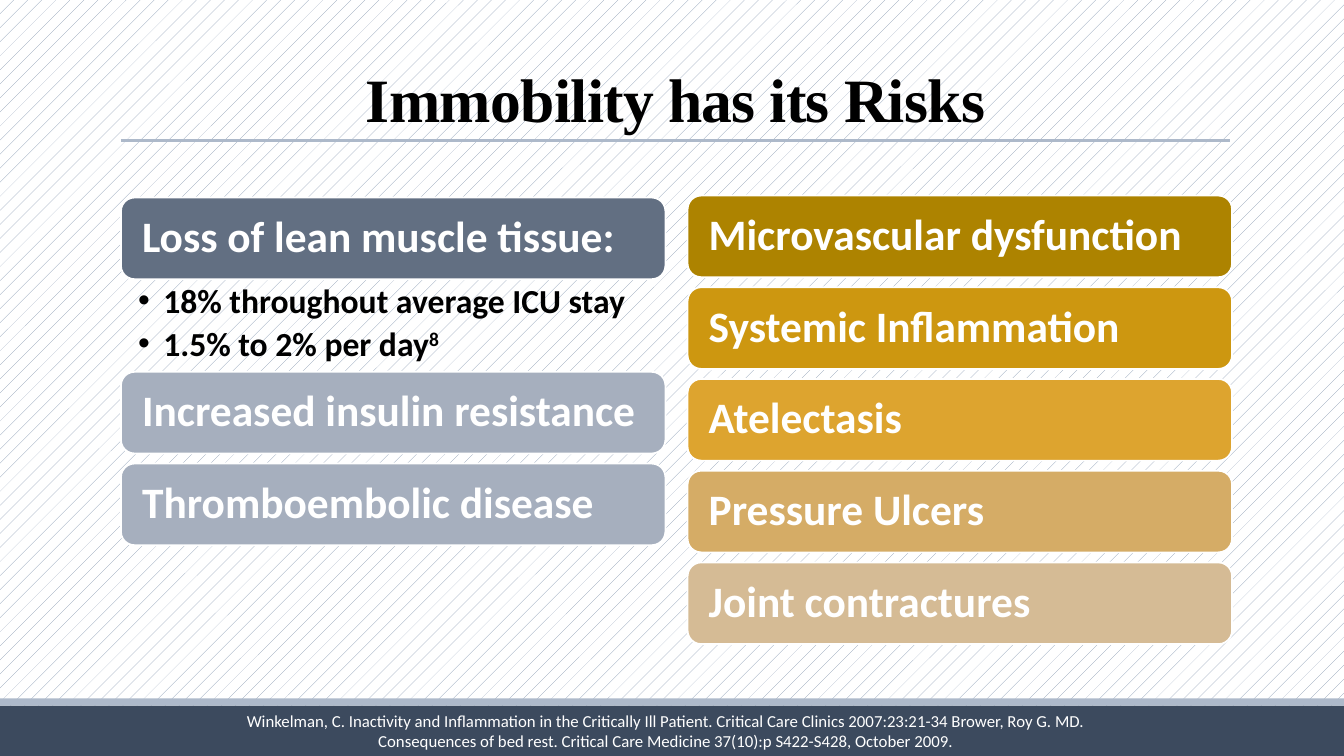
from lxml import etree
from pptx import Presentation
from pptx import util as u
from pptx.dml.color import RGBColor
from pptx.enum import dml, shapes, text
from pptx.oxml.ns import qn

WIDTH, HEIGHT = 13.33, 7.5
COL_X, COL_PITCH, COL_W = 1.2, 5.62, 5.4
COL_TOPS = (1.96, 1.94)
ROW_PITCH, CARD_H = 0.91, 0.81
TITLE = dict(name="Times New Roman", size=u.Pt(44), bold=True)
CARD = dict(name="Calibri", size=u.Pt(31), bold=True)
BULLET = dict(name="Calibri", size=u.Pt(24), bold=True)
CITATION = dict(name="Calibri", size=u.Pt(12))


def rgb(value):
    return RGBColor.from_string(value)


class Deck:
    def __init__(self):
        self.prs = Presentation()
        self.prs.slide_width, self.prs.slide_height = u.Inches(WIDTH), u.Inches(HEIGHT)
        self.s = self.prs.slides.add_slide(self.prs.slide_layouts[6])

    def cell(self, col, row, height=CARD_H):
        """Box of a grid cell: left, top, width, height."""
        return COL_X + col * COL_PITCH, COL_TOPS[col] + row * ROW_PITCH, COL_W, height

    def background(self, fore, back):
        fill = self.s.background.fill
        fill.patterned()
        fill.pattern = dml.MSO_PATTERN.PERCENT_5
        fill.fore_color.rgb, fill.back_color.rgb = rgb(fore), rgb(back)

    def block(self, box, color, kind=shapes.MSO_SHAPE.RECTANGLE, line=None):
        sp = self.s.shapes.add_shape(kind, *map(u.Inches, box))
        sp.shadow.inherit = False
        sp.fill.solid()
        sp.fill.fore_color.rgb = rgb(color)
        if line:
            sp.line.color.rgb, sp.line.width = rgb(line), u.Pt(1.25)
        else:
            sp.line.fill.background()
        return sp

    def rule(self, x1, x2, y, color):
        line = self.s.shapes.add_connector(
            shapes.MSO_CONNECTOR.STRAIGHT, *map(u.Inches, (x1, y, x2, y)))
        line.line.color.rgb, line.line.width = rgb(color), u.Pt(2.25)
        etree.SubElement(line._element.spPr, qn("a:effectLst"))

    def frame(self, sp, anchor, insets=(0.1, 0.05, 0.1, 0.05)):
        tf = sp.text_frame
        tf.word_wrap, tf.vertical_anchor = True, anchor
        for side, inset in zip(("left", "top", "right", "bottom"), insets):
            setattr(tf, f"margin_{side}", u.Inches(inset))
        return tf

    def textbox(self, box, **layout):
        return self.frame(self.s.shapes.add_textbox(*map(u.Inches, box)), **layout)

    def put_text(self, tf, lines, style, color, align=text.PP_ALIGN.LEFT,
                 spacing=1.0, after=0, hang=0, bullet=None):
        for i, line in enumerate(lines):
            p = tf.paragraphs[0] if i == 0 else tf.add_paragraph()
            p.alignment, p.line_spacing, p.space_after = align, spacing, u.Pt(after)
            pPr = p._p.get_or_add_pPr()
            if hang:
                pPr.set("marL", str(u.Inches(hang)))
                pPr.set("indent", str(-u.Inches(hang)))
            if bullet:
                etree.SubElement(pPr, qn("a:buFont"), typeface="Arial")
                etree.SubElement(pPr, qn("a:buChar"), char=bullet)
            # A caret splits off superscript text
            for k, part in enumerate(line.split("^")):
                r = p.add_run()
                r.text = part
                for name, value in style.items():
                    setattr(r.font, name, value)
                r.font.color.rgb = rgb(color)
                if k:
                    r._r.get_or_add_rPr().set("baseline", "30000")

    def card(self, col, row, label, color):
        sp = self.block(self.cell(col, row), color,
                        shapes.MSO_SHAPE.ROUNDED_RECTANGLE, "FFFFFF")
        tf = self.frame(sp, text.MSO_ANCHOR.MIDDLE, (0.17, 0.13, 0.17, 0.13))
        self.put_text(tf, [label], CARD, "FFFFFF", spacing=0.9)


def main():
    deck = Deck()
    top, bottom = text.MSO_ANCHOR.TOP, text.MSO_ANCHOR.BOTTOM
    center = text.PP_ALIGN.CENTER

    # Background and footer bands
    deck.background("8496B0", "FFFFFF")
    deck.block((0, 7, WIDTH, 0.5), "3C4A5E")
    deck.block((0, 6.93, WIDTH, 0.07), "ADB9CA")

    # Title with its rule
    deck.rule(COL_X, 12.2, 1.39, "ADB9CA")
    tf = deck.textbox((COL_X, 0.31, 11, 1.08), anchor=bottom)
    deck.put_text(tf, ["Immobility has its Risks"], TITLE, "000000", center, spacing=0.85)
    tf.paragraphs[0].runs[0]._r.get_or_add_rPr().set("spc", "-50")

    # Left column, with room for the bullets under the first card
    for row, label, color in (
        (0, "Loss of lean muscle tissue:", "626F82"),
        (1.9, "Increased insulin resistance", "A6AFBE"),
        (2.9, "Thromboembolic disease", "A6AFBE"),
    ):
        deck.card(0, row, label, color)
    tf = deck.textbox(deck.cell(0, 0.9, 0.91), anchor=top, insets=(0.17, 0.04, 0.24, 0.04))
    deck.put_text(tf, ["18% throughout average ICU stay", "1.5% to 2% per day^8"],
                  BULLET, "000000", spacing=0.9, after=4.8, hang=0.25, bullet="•")

    # Right column
    for row, (label, color) in enumerate((
        ("Microvascular dysfunction", "AD8300"),
        ("Systemic Inflammation", "CD9710"),
        ("Atelectasis", "DDA42F"),
        ("Pressure Ulcers", "D5AC66"),
        ("Joint contractures", "D5BB95"),
    )):
        deck.card(1, row, label, color)

    # Citation
    tf = deck.textbox((1.4, 7, 10.41, 0.5), anchor=top)
    deck.put_text(tf, [
        "Winkelman, C. Inactivity and Inflammation in the Critically Ill Patient. "
        "Critical Care Clinics 2007:23:21-34 Brower, Roy G. MD.",
        "Consequences of bed rest. Critical Care Medicine 37(10):p S422-S428, October 2009.",
    ], CITATION, "FFFFFF", center, hang=0.33)

    deck.prs.save("out.pptx")


if __name__ == "__main__":
    main()
